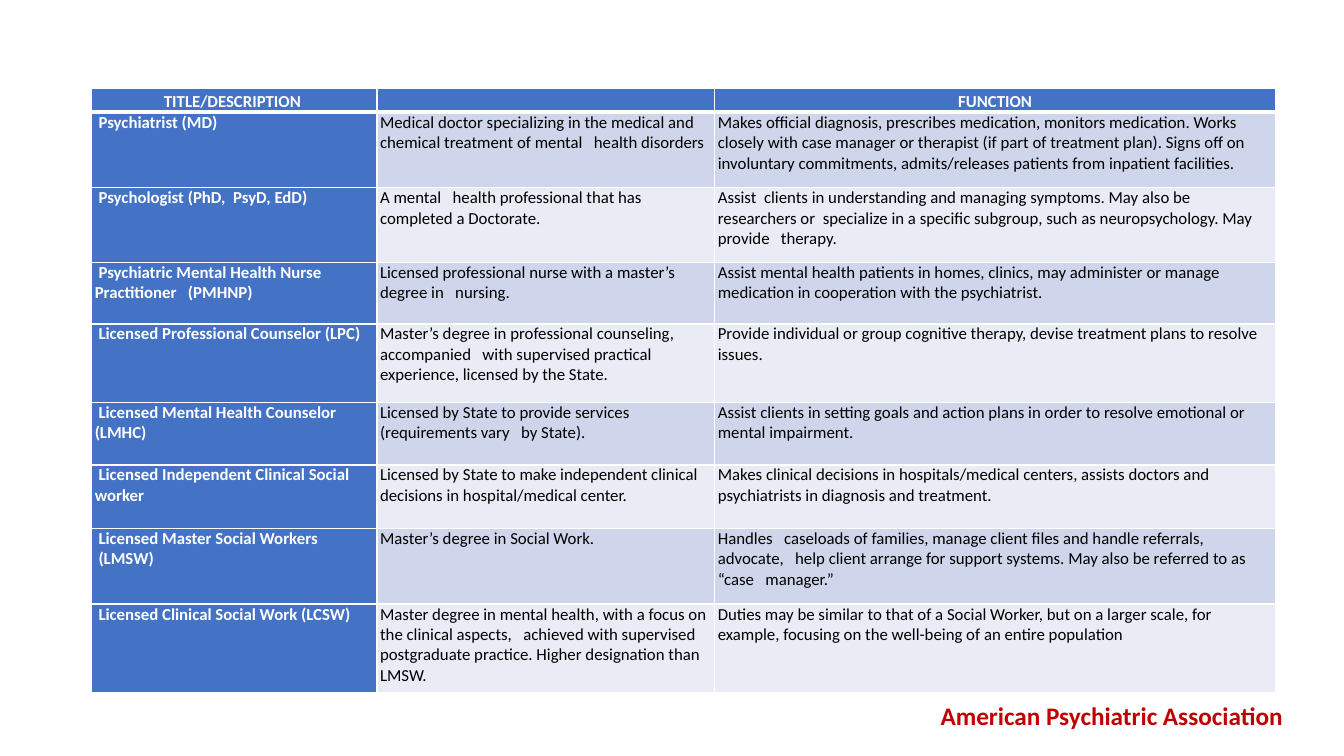
"""Build a slide with a table of mental health professions."""
from lxml import etree
from pptx import Presentation
from pptx.dml.color import RGBColor
from pptx.enum import text
from pptx.oxml import ns
from pptx.util import Inches, Pt

WHITE = RGBColor(0xFF, 0xFF, 0xFF)
BLACK = RGBColor(0x00, 0x00, 0x00)
BLUE = RGBColor(0x44, 0x72, 0xC4)
BANDS = (RGBColor(0xCF, 0xD5, 0xEA), RGBColor(0xE9, 0xEB, 0xF5))
RED = RGBColor(0xC0, 0x00, 0x00)
FONT = "Calibri"
BODY_SIZE = 12

COLUMN_WIDTHS = (2.83, 3.35, 5.56)
ROW_HEIGHTS = (0.21, 0.75, 0.74, 0.61, 0.78, 0.62, 0.63, 0.75, 0.88)
HEADER = ("TITLE/DESCRIPTION ", "", "FUNCTION")
PROFESSIONS = (
    (" Psychiatrist (MD)",
     "Medical doctor specializing in the medical and chemical treatment of mental   health disorders",
     "Makes official diagnosis, prescribes medication, monitors medication. Works closely with case "
     "manager or therapist (if part of treatment plan). Signs off on involuntary commitments, "
     "admits/releases patients from inpatient facilities."),
    (" Psychologist (PhD,  PsyD, EdD)",
     "A mental   health professional that has completed a Doctorate.",
     "Assist  clients in understanding and managing symptoms. May also be researchers or  specialize "
     "in a specific subgroup, such as neuropsychology. May provide   therapy."),
    (" Psychiatric Mental Health Nurse Practitioner   (PMHNP)",
     "Licensed professional nurse with a master’s degree in   nursing.",
     "Assist mental health patients in homes, clinics, may administer or manage medication in "
     "cooperation with the psychiatrist."),
    (" Licensed Professional Counselor (LPC)",
     "Master’s degree in professional counseling, accompanied   with supervised practical "
     "experience, licensed by the State.",
     "Provide individual or group cognitive therapy, devise treatment plans to resolve issues."),
    (" Licensed Mental Health Counselor (LMHC)",
     "Licensed by State to provide services (requirements vary   by State).",
     "Assist clients in setting goals and action plans in order to resolve emotional or mental "
     "impairment."),
    (" Licensed Independent Clinical Social worker",
     "Licensed by State to make independent clinical decisions in hospital/medical center.",
     "Makes clinical decisions in hospitals/medical centers, assists doctors and psychiatrists in "
     "diagnosis and treatment."),
    (" Licensed Master Social Workers\v (LMSW)",
     "Master’s degree in Social Work.",
     "Handles   caseloads of families, manage client files and handle referrals, advocate,   help "
     "client arrange for support systems. May also be referred to as “case   manager.”"),
    (" Licensed Clinical Social Work (LCSW)",
     "Master degree in mental health, with a focus on the clinical aspects,   achieved with "
     "supervised postgraduate practice. Higher designation than LMSW.",
     "Duties may be similar to that of a Social Worker, but on a larger scale, for example, "
     "focusing on the well-being of an entire population"),
)


def style_font(paragraph, size, color, bold):
    """Set the typeface, size, colour and weight of a paragraph."""
    paragraph.font.name = FONT
    paragraph.font.size = Pt(size)
    paragraph.font.color.rgb = color
    paragraph.font.bold = bold


def set_borders(cell, top, bottom):
    """Draw white cell borders, with the given top and bottom widths in points."""
    properties = cell._tc.get_or_add_tcPr()
    widths = {"lnL": 1, "lnR": 1, "lnT": top, "lnB": bottom}
    for position, (tag, width) in enumerate(widths.items()):
        line = etree.Element(ns.qn(f"a:{tag}"), w=str(Pt(width)))
        fill = etree.SubElement(line, ns.qn("a:solidFill"))
        etree.SubElement(fill, ns.qn("a:srgbClr"), val=str(WHITE))
        properties.insert(position, line)


def fill_cell(cell, wording, row, column):
    """Write and style one cell according to its row and column."""
    is_header = row == 0
    is_heading = is_header or column == 0
    cell.margin_left = cell.margin_right = Inches(0.03)
    cell.margin_top = cell.margin_bottom = 0
    cell.fill.solid()
    cell.fill.fore_color.rgb = BLUE if is_heading else BANDS[(row - 1) % 2]
    set_borders(cell, 3 if row == 1 else 1, 3 if is_header else 1)
    paragraph = cell.text_frame.paragraphs[0]
    if wording:
        paragraph.text = wording
    else:
        etree.SubElement(paragraph._p, ns.qn("a:endParaRPr"), sz=str(BODY_SIZE * 100))
    if is_header and wording:
        paragraph.alignment = text.PP_ALIGN.CENTER
        paragraph.line_spacing = 1.15
        paragraph.space_after = Pt(10)
    style_font(paragraph, BODY_SIZE, WHITE if is_heading else BLACK, is_heading)


def add_professions_table(slide, left, top):
    """Place the table of professions with its corner at the given point."""
    rows = (HEADER, *PROFESSIONS)
    table = slide.shapes.add_table(
        len(rows), len(HEADER), Inches(left), Inches(top),
        Inches(sum(COLUMN_WIDTHS)), Inches(sum(ROW_HEIGHTS))).table
    for column, width in zip(table.columns, COLUMN_WIDTHS):
        column.width = Inches(width)
    for row, height in zip(table.rows, ROW_HEIGHTS):
        row.height = Inches(height)
    for row, wordings in enumerate(rows):
        for column, wording in enumerate(wordings):
            fill_cell(table.cell(row, column), wording, row, column)


def add_credit(slide, left, top, width, height):
    """Place the name of the association in the given box."""
    box = slide.shapes.add_textbox(Inches(left), Inches(top), Inches(width), Inches(height))
    box.text_frame.word_wrap = False
    box.text_frame.auto_size = text.MSO_AUTO_SIZE.SHAPE_TO_FIT_TEXT
    paragraph = box.text_frame.paragraphs[0]
    paragraph.text = "American Psychiatric Association"
    style_font(paragraph, 18, RED, True)


def main():
    """Build and save the presentation."""
    presentation = Presentation()
    presentation.slide_width = Inches(13.33)
    presentation.slide_height = Inches(7.5)
    slide = presentation.slides.add_slide(presentation.slide_layouts[6])
    add_professions_table(slide, 0.91, 0.88)
    add_credit(slide, 9.23, 6.9, 3.62, 0.4)
    presentation.save("out.pptx")


if __name__ == "__main__":
    main()
